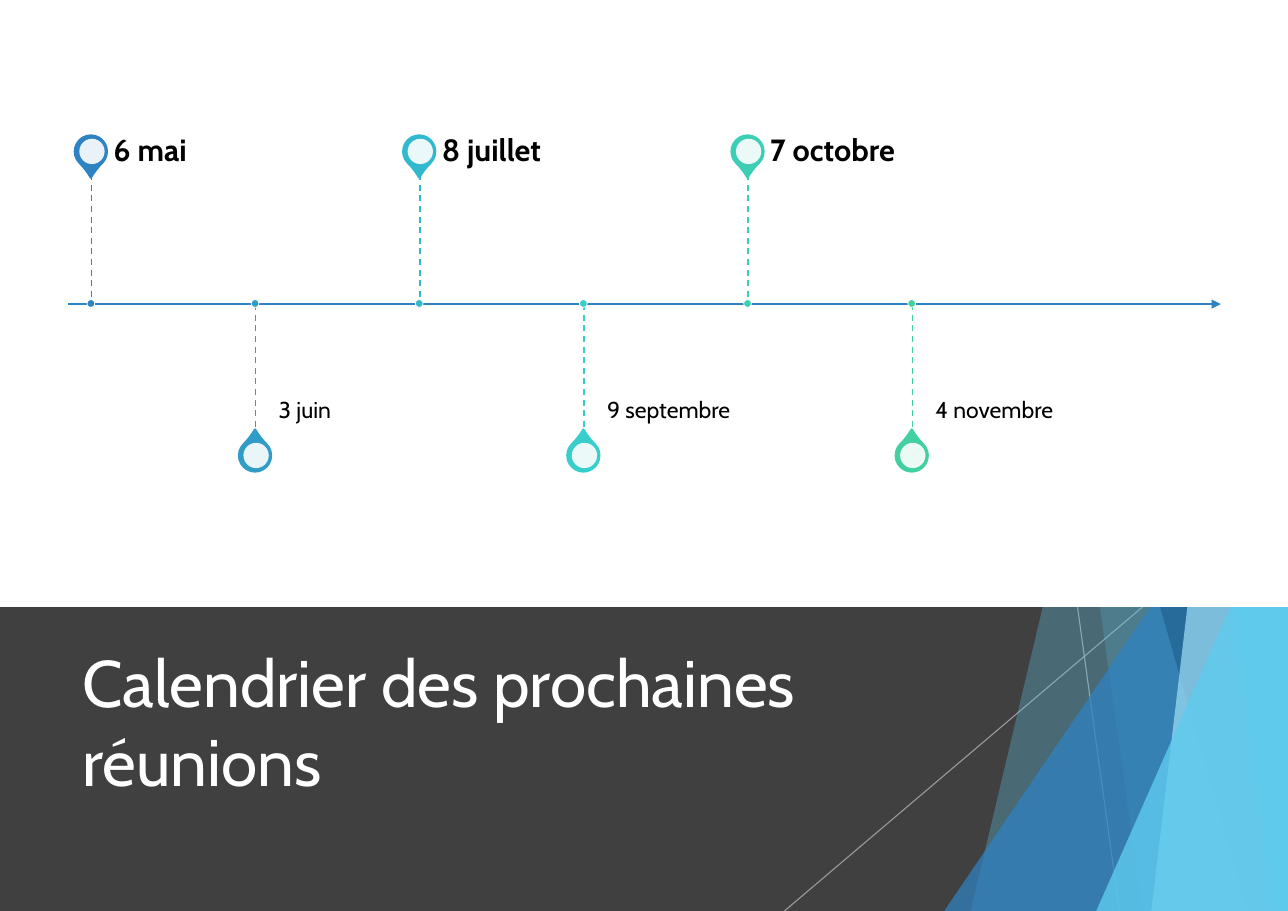
from pptx import Presentation
from pptx.dml.color import RGBColor
from pptx.enum.dml import MSO_LINE
from pptx.enum.shapes import MSO_CONNECTOR, MSO_SHAPE
from pptx.enum.text import MSO_ANCHOR
from pptx.oxml.ns import qn
from pptx.util import Pt
from lxml.etree import SubElement

PX = 9144  # 100 px to the inch
INK = {
    "white": "FFFFFF", "black": "000000", "dark": "404040", "grey": "BFBFBF",
    "sky": "5FCBEF", "blue": "2E83C3", "navy": "226292", "pale": "9FE0F5",
    "may": "2E83C3", "june": "309DC8", "july": "31B9CD",
    "sept": "37CECB", "oct": "3CCFB6", "nov": "42D0A2",
}

deck = Presentation()
deck.slide_width, deck.slide_height = 1169 * PX, 827 * PX
slide = deck.slides.add_slide(deck.slide_layouts[6])
shapes = slide.shapes


def paint(part, fill=None, line=None, width=1, alpha=100):
    """Set the fill or line of a shape or connector, with no shadow."""
    if fill:
        part.shadow.inherit = False
        part.fill.solid()
        part.fill.fore_color.rgb = RGBColor.from_string(INK[fill])
    else:
        SubElement(part._element.spPr, qn("a:effectLst"))
    if line:
        part.line.color.rgb = RGBColor.from_string(INK[line])
        part.line.width = Pt(width)
    else:
        part.line.fill.background()
    if alpha < 100:
        tint = next(part._element.spPr.iter(qn("a:srgbClr")))
        SubElement(tint, qn("a:alpha"), val=str(alpha * 1000))
    return part


def write(words, box, size, ink, form, bold=False):
    """Add a text box; form holds the text frame's settings."""
    frame = shapes.add_textbox(*[n * PX for n in box]).text_frame
    frame.word_wrap = True
    for key, val in form.items():
        setattr(frame, key, val)
    para = frame.paragraphs[0]
    run = para.add_run()
    run.text = words
    look = {"name": "Cabin", "size": Pt(size), "bold": bold}
    for key, val in look.items():
        setattr(run.font, key, val)
    run.font.color.rgb = RGBColor.from_string(INK[ink])
    return para


# Dark band
band = shapes.add_shape(MSO_SHAPE.RECTANGLE, 0, 551 * PX, 1169 * PX, 276 * PX)
paint(band, "dark")

# Thin rays
for top, foot in ((978, 1016), (1037, 712)):
    ray = shapes.add_connector(MSO_CONNECTOR.STRAIGHT, top * PX, 551 * PX,
                               foot * PX, 827 * PX)
    paint(ray, line="grey", width=0.75, alpha=70)

# Glass shards along the right edge: top x, foot x, top y, colour, opacity
shards = (
    (1077, 881, 0, "sky", 30),
    (921, 1037, 0, "sky", 20),
    (1169, 857, 367, "blue", 72),
    (895, 1132, 0, "navy", 70),
    (1143, 1045, 0, "pale", 70),
    (1049, 1155, 0, "sky", 65),
    (1169, 995, 433, "sky", 80),
)
for top, foot, y, ink, alpha in shards:
    if top == 1169:
        shard = shapes.add_shape(MSO_SHAPE.ISOSCELES_TRIANGLE, foot * PX, y * PX,
                                 (top - foot) * PX, (827 - y) * PX)
        shard.adjustments[0] = 1
    else:
        path = shapes.build_freeform(top, y, scale=PX)
        path.add_line_segments([(1169, y), (1169, 827), (foot, 827)])
        shard = path.convert_to_shape()
    paint(shard, ink, alpha=alpha)

# Title
write("Calendrier des prochaines réunions", (65, 575, 824, 159), 43, "white",
      {"vertical_anchor": MSO_ANCHOR.MIDDLE})

# White panel
panel = shapes.add_shape(MSO_SHAPE.RECTANGLE, 0, 0, 1169 * PX, 551 * PX)
paint(panel, "white")

# Time axis
axis = shapes.add_connector(MSO_CONNECTOR.STRAIGHT, 62 * PX, 276 * PX,
                            1108 * PX, 276 * PX)
paint(axis, line="blue", width=1.5)
SubElement(axis.line._get_or_add_ln(), qn("a:tailEnd"), type="triangle")

# Meetings, above and below the axis in turn
above = {"vertical_anchor": MSO_ANCHOR.MIDDLE, "margin_left": 0, "margin_top": 0,
         "margin_right": 14 * PX, "margin_bottom": 0}
below = {"vertical_anchor": MSO_ANCHOR.BOTTOM, "margin_left": 0,
         "margin_top": 16 * PX, "margin_right": 0, "margin_bottom": 10 * PX}
dates = (("6 mai", "may"), ("3 juin", "june"), ("8 juillet", "july"),
         ("9 septembre", "sept"), ("7 octobre", "oct"), ("4 novembre", "nov"))
for i, (date, ink) in enumerate(dates):
    x = 83 + 149 * i
    if i % 2 == 0:
        y, turn, start, end = 123, 135, 158, 276
        para = write(date, (x + 20, 117, 248, 41), 20, "black", above, True)
    else:
        y, turn, start, end = 399, 315, 276, 393
        para = write(date, (x + 21, 276, 248, 117), 15, "black", below)
    para.line_spacing = 0.9

    pin = shapes.add_shape(MSO_SHAPE.TEAR, (x - 15) * PX, y * PX, 29 * PX, 29 * PX)
    pin.adjustments[0] = 1.15
    pin.rotation = turn
    paint(pin, ink, ink, 1.5)
    hole = shapes.add_shape(MSO_SHAPE.OVAL, (x - 11) * PX, (y + 3) * PX,
                            23 * PX, 23 * PX)
    paint(hole, "white", alpha=90)

    stem = shapes.add_connector(MSO_CONNECTOR.STRAIGHT, x * PX, start * PX,
                                x * PX, end * PX)
    paint(stem, line=ink)
    stem.line.dash_style = MSO_LINE.DASH
    dot = shapes.add_shape(MSO_SHAPE.OVAL, (x - 4) * PX, 272 * PX, 7 * PX, 7 * PX)
    paint(dot, ink, "white", 0.5)

deck.save("out.pptx")
